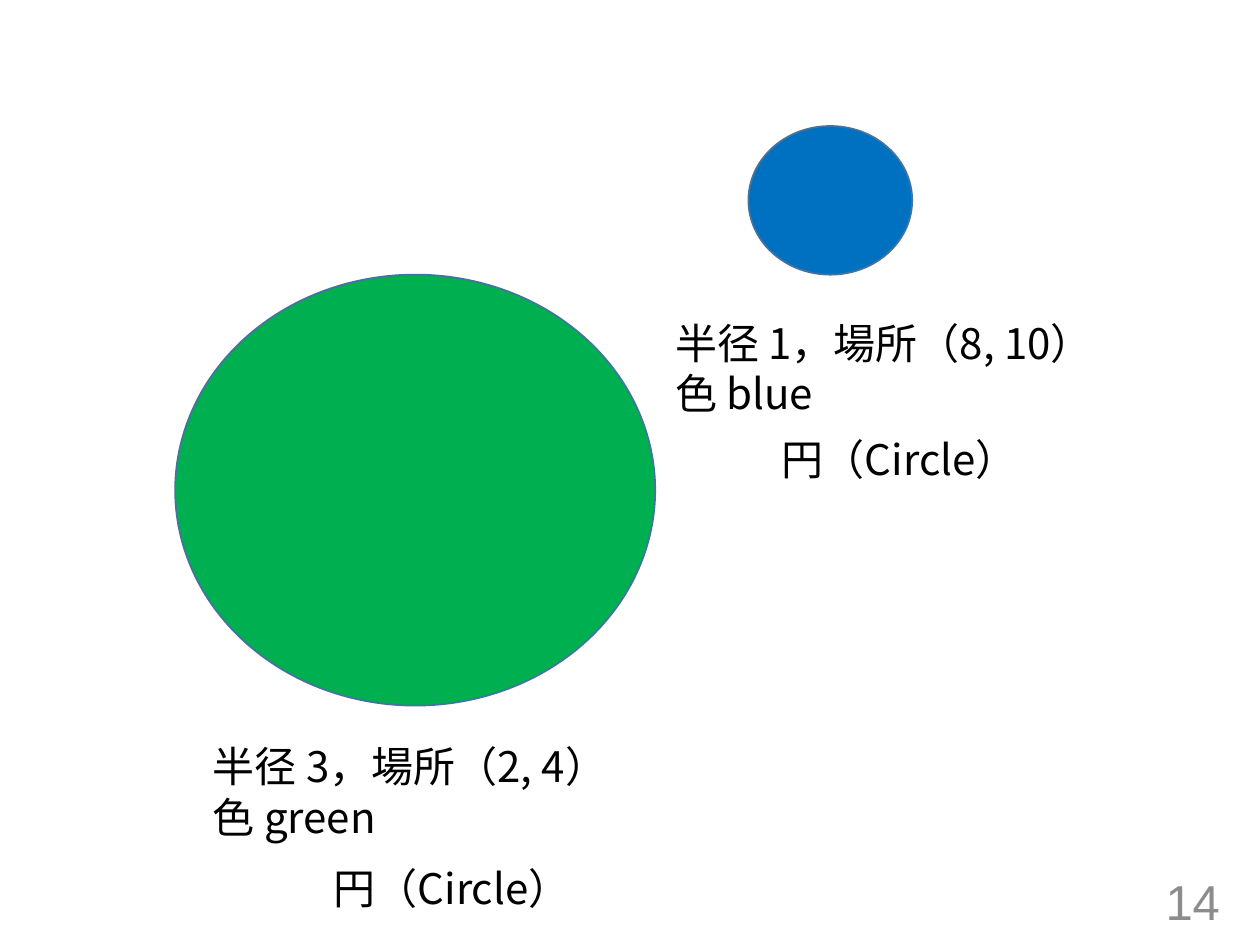
from lxml import etree
from pptx import Presentation
from pptx.dml.color import RGBColor
from pptx.enum import shapes, text
from pptx.oxml.ns import qn
from pptx.util import Inches, Pt

GREEN = RGBColor(0x00, 0xB0, 0x50)
BLUE = RGBColor(0x00, 0x70, 0xC0)
OUTLINE = RGBColor(0x43, 0x73, 0x9E)
BLACK = RGBColor(0x00, 0x00, 0x00)
GRAY = RGBColor(0x8C, 0x8C, 0x8C)
BODY_FONT = "Noto Sans CJK JP"

presentation = Presentation()
presentation.slide_width = Inches(10)
presentation.slide_height = Inches(7.5)
slide = presentation.slides.add_slide(presentation.slide_layouts[6])


def add_label(left, top, width, height, lines, size=24, font=BODY_FONT, color=BLACK):
    box = slide.shapes.add_textbox(Inches(left), Inches(top), Inches(width), Inches(height))
    frame = box.text_frame
    frame.word_wrap = True
    frame.text = "\n".join(lines)
    for paragraph in frame.paragraphs:
        paragraph.font.size = Pt(size)
        paragraph.font.name = font
        paragraph.font.color.rgb = color
        # East Asian characters take their own font element
        properties = paragraph._p.pPr.find(qn("a:defRPr"))
        etree.SubElement(properties, qn("a:ea")).set("typeface", font)
    return frame


# Circles: position and size, fill, then their attribute and class labels
circles = [
    ((1.39, 2.18, 3.81, 3.42), GREEN, (1.59, 5.83), ["半径 3，場所（2, 4）", "色 green"], (2.55, 6.8)),
    ((5.94, 1, 1.3, 1.18), BLUE, (5.26, 2.47), ["半径 1，場所（8, 10）", "色 blue"], (6.1, 3.39)),
]
for bounds, color, attributes_at, attributes, class_at in circles:
    circle = slide.shapes.add_shape(shapes.MSO_SHAPE.OVAL, *map(Inches, bounds))
    circle.shadow.inherit = False
    circle.fill.solid()
    circle.fill.fore_color.rgb = color
    circle.line.color.rgb = OUTLINE
    circle.line.width = Pt(1)
    add_label(*attributes_at, 4.8, 0.91, attributes)
    add_label(*class_at, 2.71, 0.5, ["円（Circle）"])

# Slide number
number = add_label(7.53, 6.95, 2.25, 0.4, ["14"], 28, "Arial", GRAY)
number.vertical_anchor = text.MSO_ANCHOR.MIDDLE
number.paragraphs[0].alignment = text.PP_ALIGN.RIGHT

presentation.save("out.pptx")
